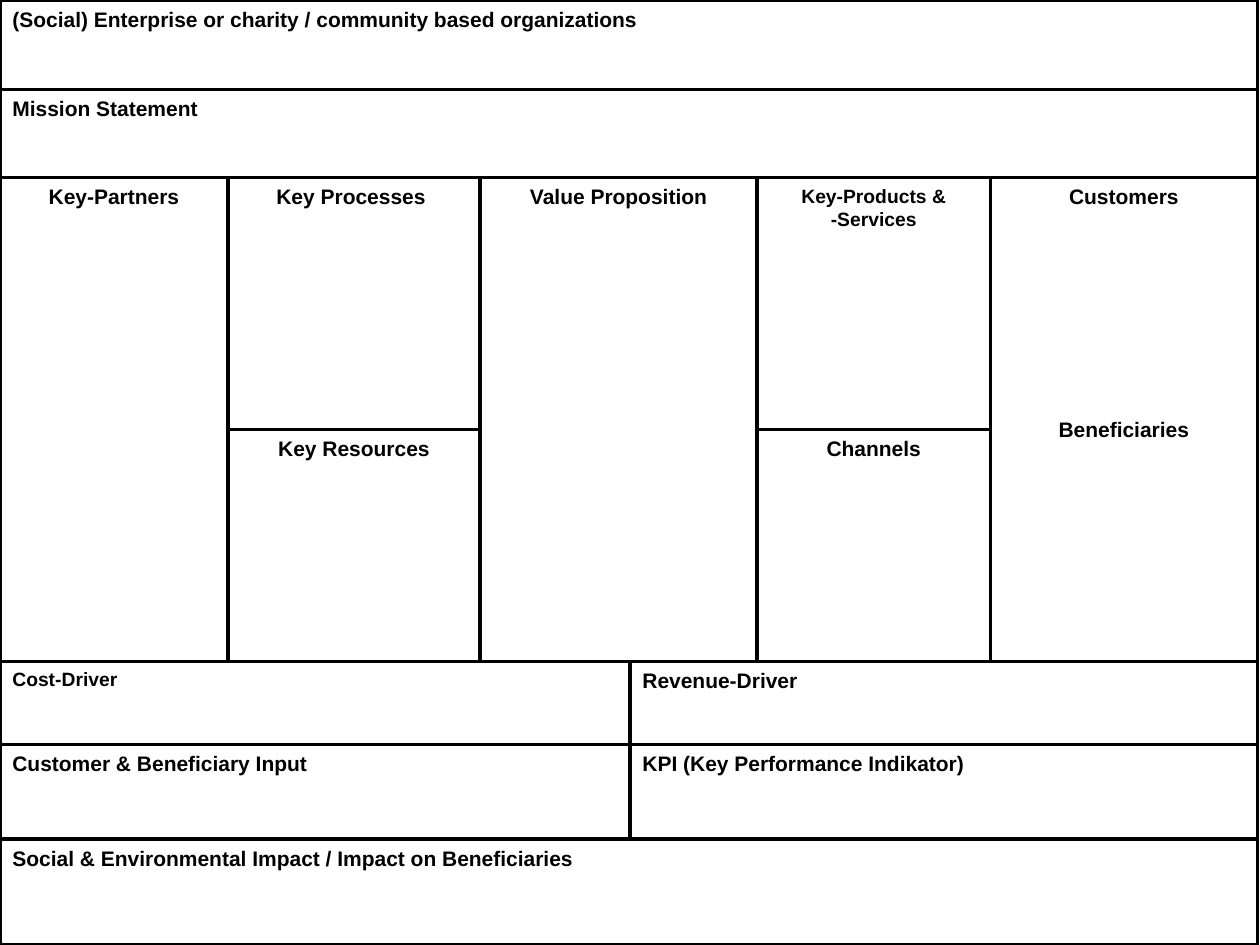
from pptx import Presentation
from pptx.dml.color import RGBColor
from pptx.enum.shapes import MSO_SHAPE
from pptx.enum.text import MSO_ANCHOR, PP_ALIGN
from pptx.util import Inches, Pt

RECTANGLE = MSO_SHAPE.RECTANGLE
TOP = MSO_ANCHOR.TOP
LEFT, CENTER = PP_ALIGN.LEFT, PP_ALIGN.CENTER
BLACK = RGBColor(0x00, 0x00, 0x00)
WHITE = RGBColor(0xFF, 0xFF, 0xFF)

# Grid edges of the canvas, in inches
COLUMNS = [0, 1.81, 3.81, 6.01, 7.86, 9.98]
HALVES = [0, 5, 9.98]
ROWS = [0, 0.71, 1.41, 3.41, 5.25, 5.91, 6.66, 7.5]
FULL_WIDTH = [0, 9.98]
BENEFICIARIES_GAP = 118.5

# Full-width and half-width bands: edges, column, row, heading, size
BANDS = [
    (FULL_WIDTH, 0, 0, "(Social) Enterprise or charity / community based organizations", 12),
    (FULL_WIDTH, 0, 1, "Mission Statement", 12),
    (HALVES, 0, 4, "Cost-Driver", 11),
    (HALVES, 1, 4, "Revenue-Driver", 12),
    (HALVES, 0, 5, "Customer & Beneficiary Input", 12),
    (HALVES, 1, 5, "KPI (Key Performance Indikator)", 12),
    (FULL_WIDTH, 0, 6, "Social & Environmental Impact / Impact on Beneficiaries", 12),
]

# Middle blocks: column, first row, row after the last, headings, size, gap in points
BLOCKS = [
    (0, 2, 4, ["Key-Partners"], 12, 0),
    (1, 2, 3, ["Key Processes "], 12, 0),
    (1, 3, 4, ["Key Resources"], 12, 0),
    (2, 2, 4, ["Value Proposition"], 12, 0),
    (3, 2, 3, ["Key-Products &", "-Services"], 11, 0),
    (3, 3, 4, ["Channels"], 12, 0),
    (4, 2, 4, ["Customers", "Beneficiaries"], 12, BENEFICIARIES_GAP),
]


class Canvas:
    def __init__(self, page, font="Arial", line_width=2):
        self.page = page
        self.font = font
        self.line_width = line_width

    def cell(self, left, top, right, bottom, headings, size, align, gap=0):
        """Draw a bordered cell; gap is the space in points between headings."""
        box = self.page.shapes.add_shape(
            RECTANGLE, Inches(left), Inches(top),
            Inches(right - left), Inches(bottom - top))
        box.shadow.inherit = False
        box.fill.solid()
        box.fill.fore_color.rgb = WHITE
        box.line.color.rgb = BLACK
        box.line.width = Pt(self.line_width)
        frame = box.text_frame
        frame.word_wrap = True
        frame.vertical_anchor = TOP
        for index, heading in enumerate(headings):
            para = frame.add_paragraph() if index else frame.paragraphs[0]
            para.alignment = align
            para.space_before = Pt(gap if index else 0)
            self.span(para, heading, size)

    def span(self, para, text, size):
        span = para.add_run()
        span.text = text
        span.font.name = self.font
        span.font.size = Pt(size)
        span.font.bold = True
        span.font.color.rgb = BLACK


def main():
    deck = Presentation()
    deck.slide_width, deck.slide_height = Inches(10), Inches(7.5)
    canvas = Canvas(deck.slides.add_slide(deck.slide_layouts[6]))

    for edges, column, row, heading, size in BANDS:
        canvas.cell(edges[column], ROWS[row], edges[column + 1], ROWS[row + 1],
                    [heading], size, LEFT)
    for column, first, last, headings, size, gap in BLOCKS:
        canvas.cell(COLUMNS[column], ROWS[first], COLUMNS[column + 1], ROWS[last],
                    headings, size, CENTER, gap)

    deck.save("out.pptx")


if __name__ == "__main__":
    main()
